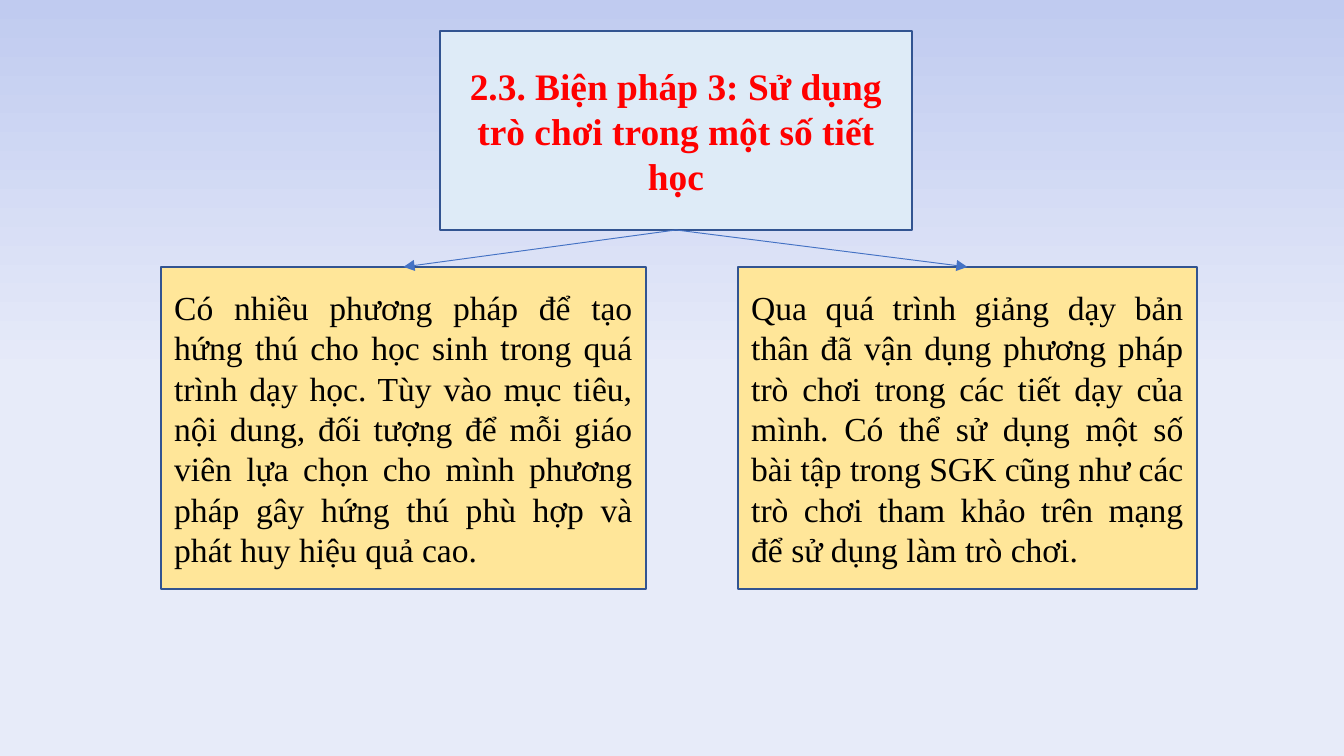
from lxml.etree import SubElement
from pptx import Presentation
from pptx.dml.color import RGBColor
from pptx.enum.shapes import MSO_CONNECTOR, MSO_SHAPE
from pptx.enum.text import MSO_ANCHOR, MSO_AUTO_SIZE, PP_ALIGN
from pptx.oxml.ns import qn
from pptx.util import Emu, Pt

SLIDE_W, SLIDE_H = 1344, 756
FONT = "Times New Roman"
SKY = RGBColor(0xC0, 0xCB, 0xF0)
MIST = RGBColor(0xE7, 0xEB, 0xF9)
PALE_BLUE = RGBColor(0xDE, 0xEB, 0xF7)
CREAM = RGBColor(0xFF, 0xE6, 0x99)
NAVY = RGBColor(0x32, 0x54, 0x91)
BLUE = RGBColor(0x44, 0x72, 0xC4)
RED = RGBColor(0xFF, 0x00, 0x00)
BLACK = RGBColor(0x00, 0x00, 0x00)


def px(n):
    """Turn px into EMU; 1344 px span 10 inches."""
    return Emu(round(n * 9144000 / SLIDE_W))


def style(shape, text, fill, color, size, align, bold=False):
    shape.fill.solid()
    shape.fill.fore_color.rgb = fill
    shape.line.color.rgb = NAVY
    shape.line.width = Pt(1)
    shape.shadow.inherit = False
    frame = shape.text_frame
    frame.text = text
    frame.word_wrap = True
    frame.auto_size = MSO_AUTO_SIZE.NONE
    frame.vertical_anchor = MSO_ANCHOR.MIDDLE
    paragraph = frame.paragraphs[0]
    paragraph.alignment = align
    font = paragraph.font
    font.name, font.size, font.bold = FONT, Pt(size), bold
    font.color.rgb = color


prs = Presentation()
prs.slide_width, prs.slide_height = px(SLIDE_W), px(SLIDE_H)
slide = prs.slides.add_slide(prs.slide_layouts[5])

# Background: fades downwards until half height
backdrop = slide.background.fill
backdrop.gradient()
backdrop.gradient_angle = 270
for stop, color, position in zip(backdrop.gradient_stops, (SKY, MIST), (0, 0.5)):
    stop.color.rgb = color
    stop.position = position

# Title in an ellipse
measure = slide.shapes.title
measure.left, measure.top = px(440), px(31)
measure.width, measure.height = px(472), px(199)
ellipse = SubElement(measure._element.spPr, qn("a:prstGeom"), prst="ellipse")
SubElement(ellipse, qn("a:avLst"))
style(measure, "2.3. Biện pháp 3: Sử dụng trò chơi trong một số tiết học",
      PALE_BLUE, RED, 20, PP_ALIGN.CENTER, bold=True)

# Two explanations, each reached by an arrow from the title
EXPLANATIONS = [
    (161, 485, "Có nhiều phương pháp để tạo hứng thú cho học sinh trong quá trình "
               "dạy học. Tùy vào mục tiêu, nội dung, đối tượng để mỗi giáo viên lựa "
               "chọn cho mình phương pháp gây hứng thú phù hợp và phát huy hiệu quả cao."),
    (738, 459, "Qua quá trình giảng dạy bản thân đã vận dụng phương pháp trò chơi "
               "trong các tiết dạy của mình. Có thể sử dụng một số bài tập trong SGK "
               "cũng như các trò chơi tham khảo trên mạng để sử dụng làm trò chơi."),
]
for left, width, text in EXPLANATIONS:
    explanation = slide.shapes.add_shape(
        MSO_SHAPE.RECTANGLE, px(left), px(267), px(width), px(322))
    style(explanation, text, CREAM, BLACK, 18, PP_ALIGN.JUSTIFY)

    arrow = slide.shapes.add_connector(
        MSO_CONNECTOR.STRAIGHT, px(676), px(230), px(left + width / 2), px(267))
    arrow.end_connect(explanation, 0)
    arrow.line.color.rgb = BLUE
    arrow.line.width = Pt(0.5)
    SubElement(arrow.line._get_or_add_ln(), qn("a:tailEnd"), type="triangle")
    SubElement(arrow._element.spPr, qn("a:effectLst"))

prs.save("out.pptx")
